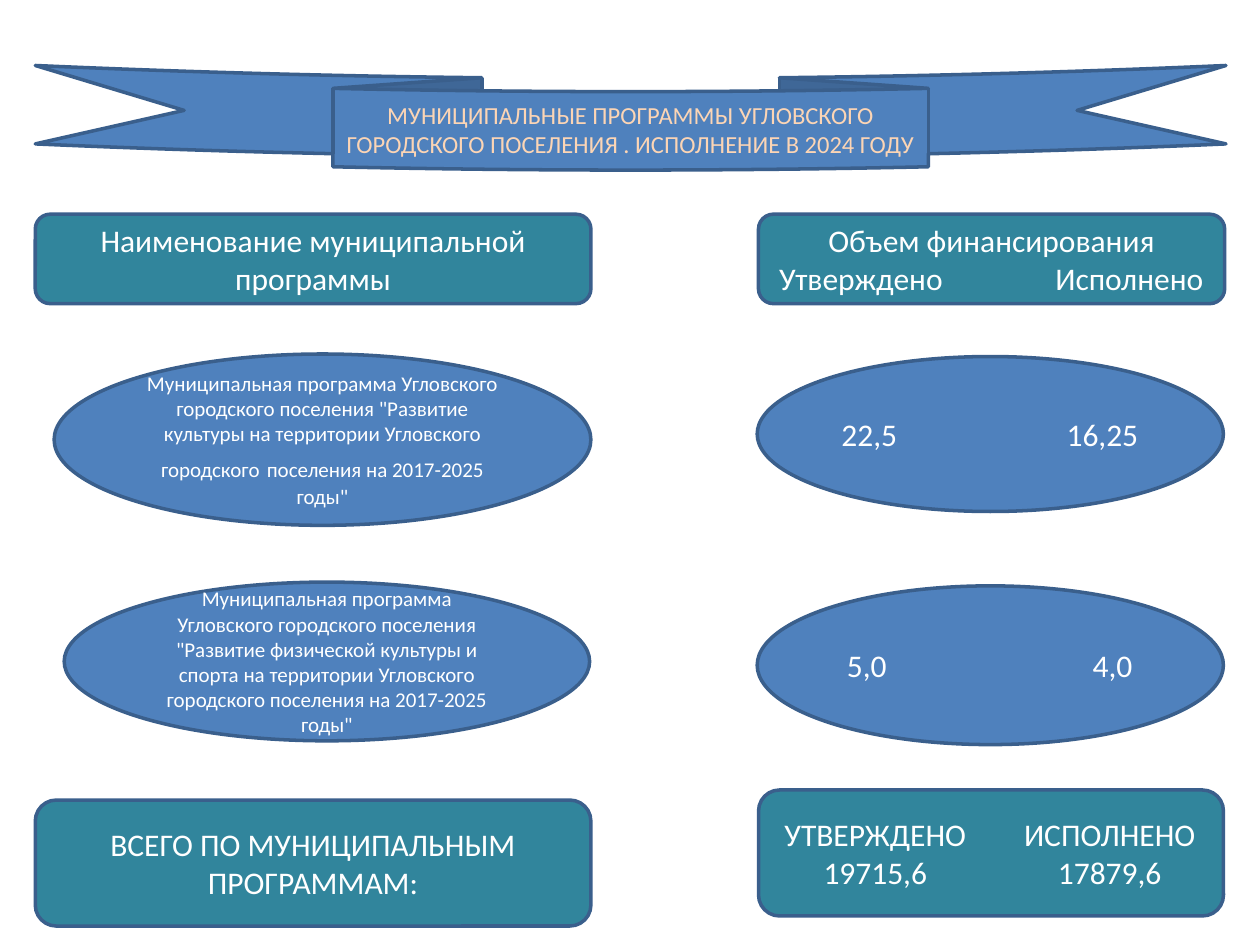
import pptx
import pptx.dml.color
import pptx.enum.shapes
import pptx.enum.text
import pptx.util
import lxml.etree
from pptx.oxml.ns import qn

Inches = pptx.util.Inches
SHAPES = pptx.enum.shapes.MSO_SHAPE
ALIGN = pptx.enum.text.PP_ALIGN


def color(hex_string):
    return pptx.dml.color.RGBColor.from_string(hex_string)


class ProgramSlide:
    """Holds the style and the current slide."""

    font = "Calibri"
    blue, teal, outline = "4F81BD", "31859C", "3A5F8C"
    white, peach = "FFFFFF", "FCD5B5"

    def __init__(self, presentation):
        self.slide = presentation.slides.add_slide(presentation.slide_layouts[6])

    def shape(self, kind, box, fill):
        shape = self.slide.shapes.add_shape(kind, *(Inches(length) for length in box))
        shape.shadow.inherit = False
        shape.fill.solid()
        shape.fill.fore_color.rgb = color(fill)
        shape.line.color.rgb = color(self.outline)
        shape.line.width = pptx.util.Pt(2)
        shape.text_frame.word_wrap = True
        shape.text_frame.vertical_anchor = pptx.enum.text.MSO_ANCHOR.MIDDLE
        return shape

    def paragraph(self, shape, runs, font_color=white):
        """Add a centred paragraph of (text, size) runs."""
        frame = shape.text_frame
        paragraph = frame.add_paragraph() if frame.text else frame.paragraphs[0]
        paragraph.alignment = ALIGN.CENTER
        for text, size in runs:
            run = paragraph.add_run()
            run.text = text
            run.font.name = self.font
            run.font.size = pptx.util.Pt(size)
            run.font.color.rgb = color(font_color)
        return paragraph

    def columns(self, shape, values, centers):
        """Add a line whose values are centred on tab stops."""
        text = "".join("\t" + value for value in values)
        paragraph = self.paragraph(shape, [(text, 18)])
        paragraph.alignment = ALIGN.LEFT
        properties = paragraph._p.get_or_add_pPr()
        tabs = lxml.etree.SubElement(properties, qn("a:tabLst"))
        for center in centers:
            lxml.etree.SubElement(tabs, qn("a:tab"), pos=str(Inches(center)), algn="ctr")

    def ribbon(self, box, text):
        shape = self.shape(SHAPES.CURVED_DOWN_RIBBON, box, self.blue)
        self.paragraph(shape, [(text, 14)], self.peach)

    def panel(self, box, *lines):
        shape = self.shape(SHAPES.ROUNDED_RECTANGLE, box, self.teal)
        for line in lines:
            self.paragraph(shape, [(line, 18)])
        return shape

    def program(self, box, *runs):
        self.paragraph(self.shape(SHAPES.OVAL, box, self.blue), runs)

    def amounts(self, box, values, centers):
        self.columns(self.shape(SHAPES.OVAL, box, self.blue), values, centers)


def main():
    presentation = pptx.Presentation()
    presentation.slide_width, presentation.slide_height = Inches(10), Inches(7.5)
    page = ProgramSlide(presentation)

    # Heading ribbon
    page.ribbon((0.28, 0.52, 9.45, 0.83),
                "МУНИЦИПАЛЬНЫЕ ПРОГРАММЫ УГЛОВСКОГО ГОРОДСКОГО ПОСЕЛЕНИЯ . ИСПОЛНЕНИЕ В 2024 ГОДУ")

    # Column headings
    page.panel((0.28, 1.7, 4.41, 0.71), "Наименование муниципальной программы")
    financing = page.panel((6.02, 1.7, 3.7, 0.71), "Объем финансирования")
    page.columns(financing, ("Утверждено", "Исполнено"), (0.68, 2.81))

    # Culture programme
    page.program((0.43, 2.81, 4.26, 1.36),
                 ("Муниципальная программа Угловского городского поселения "
                  "\"Развитие культуры на территории Угловского городского", 12),
                 (" ", 18),
                 ("поселения на 2017-2025 годы\"", 12))
    page.amounts((6.01, 2.83, 3.7, 1.23), ("22,5", "16,25"), (0.25, 2.1))

    # Sports programme
    page.program((0.51, 4.62, 4.17, 1.26),
                 ("Муниципальная программа Угловского городского поселения "
                  "\"Развитие физической культуры и спорта на территории Угловского "
                  "городского поселения на 2017-2025 годы\"", 12))
    page.amounts((6.01, 4.65, 3.7, 1.26), ("5,0", "4,0"), (0.23, 2.18))

    # Totals
    page.panel((0.28, 6.35, 4.41, 1), "ВСЕГО ПО МУНИЦИПАЛЬНЫМ ПРОГРАММАМ:")
    totals = page.panel((6.02, 6.27, 3.69, 1))
    for values in (("УТВЕРЖДЕНО", "ИСПОЛНЕНО"), ("19715,6", "17879,6")):
        page.columns(totals, values, (0.78, 2.64))

    presentation.save("out.pptx")


if __name__ == "__main__":
    main()
